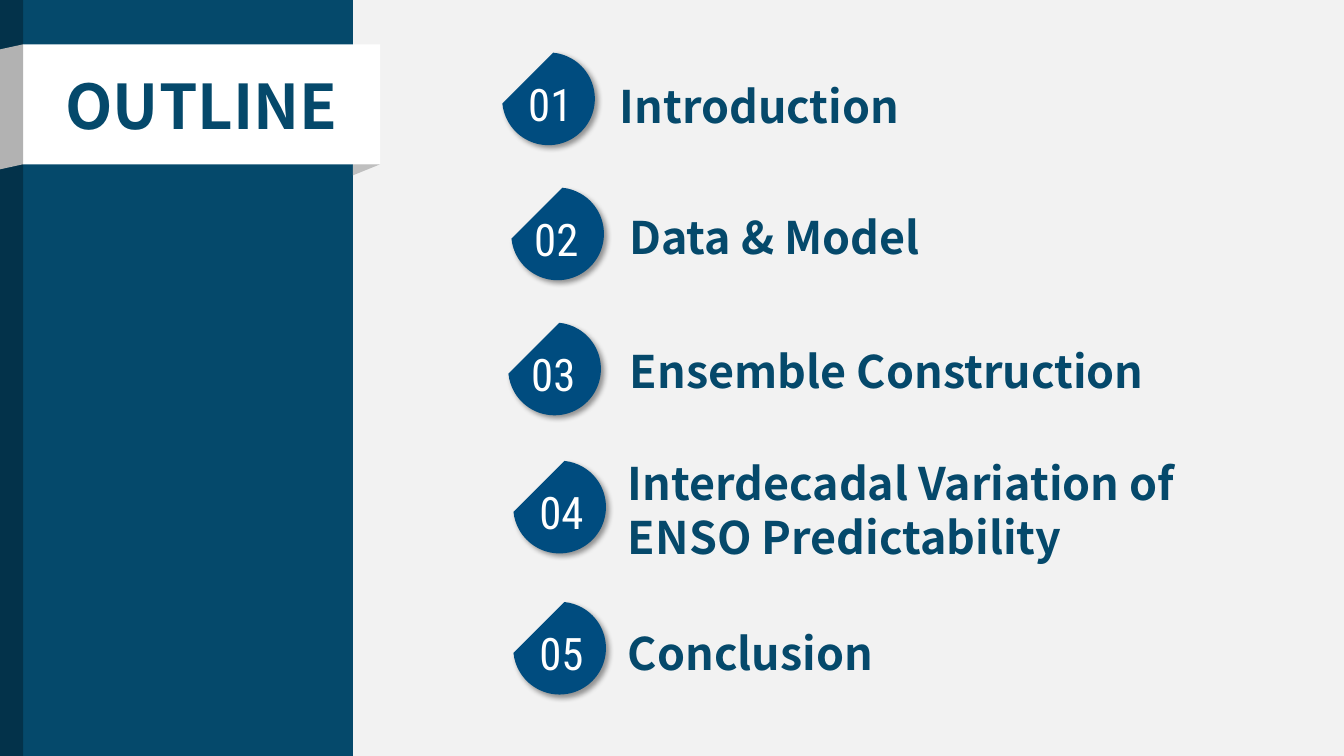
from lxml import etree
from pptx import Presentation
from pptx.dml.color import RGBColor
from pptx.enum.shapes import MSO_SHAPE
from pptx.enum.text import MSO_ANCHOR, PP_ALIGN
from pptx.oxml.ns import qn
from pptx.util import Inches, Pt

RECT, CHORD = MSO_SHAPE.RECTANGLE, MSO_SHAPE.CHORD
LEFT, CENTER = PP_ALIGN.LEFT, PP_ALIGN.CENTER
TOP, MIDDLE = MSO_ANCHOR.TOP, MSO_ANCHOR.MIDDLE

WIDE, HIGH = 13.33, 7.5
TITLE = "OUTLINE"
# title, badge left and top, number left, title left, top and size
ITEMS = [
    ("Introduction", 4.98, 0.52, 5.14, 6.05, 0.73, 3.47, 0.64),
    ("Data & Model", 5.07, 1.86, 5.2, 6.14, 2.03, 3.72, 0.64),
    ("Ensemble Construction", 5.04, 3.2, 5.17, 6.15, 3.36, 5.63, 0.64),
    ("Interdecadal Variation of ENSO Predictability",
     5.09, 4.57, 5.25, 6.13, 4.47, 5.79, 1.18),
    ("Conclusion", 5.09, 5.97, 5.25, 6.13, 6.16, 3.24, 0.64),
]
NAVY, BLUE, WHITE, GREY, PALE = "05496B", "004C7F", "FFFFFF", "BFBFBF", "F2F2F2"
SANS, SLIM = "Noto Sans CJK SC", "Roboto Condensed"
EDGE, SIDE = 0.23, 3.5           # right ends of the dark strip and the side panel
BAND = (EDGE, 0.44, 3.54, 1.19)  # title ribbon
DISC, DROP = 0.92, 0.19          # badge size, number offset below badge top


def color(code):
    return RGBColor.from_string(code)


def paint(shape, fill):
    shape.fill.solid()
    shape.fill.fore_color.rgb = color(fill)
    shape.line.fill.background()
    shape.shadow.inherit = False
    return shape


def block(kind, box, fill):
    return paint(slide.shapes.add_shape(kind, *map(Inches, box)), fill)


def fold(points, fill):
    """Draw a closed polygon for a folded end of the ribbon."""
    first, *rest = [(Inches(x), Inches(y)) for x, y in points]
    pen = slide.shapes.build_freeform(*first)
    pen.add_line_segments(rest, close=True)
    return paint(pen.convert_to_shape(), fill)


def write(shape, text, size=32, font=SANS, ink=NAVY, bold=True, align=LEFT,
          anchor=TOP):
    frame = shape.text_frame
    frame.word_wrap = True
    frame.vertical_anchor = anchor
    para = frame.paragraphs[0]
    para.alignment = align
    run = para.add_run()
    run.text = text
    run.font.size, run.font.name, run.font.bold = Pt(size), font, bold
    run.font.color.rgb = color(ink)
    for tag in ("a:ea", "a:cs"):
        etree.SubElement(run.font._element, qn(tag), typeface=font)


def label(box, text, **style):
    write(slide.shapes.add_textbox(*map(Inches, box)), text, **style)


def tint(parent, alpha):
    etree.SubElement(parent, qn("a:alpha"), val=str(alpha * 1000))


def shade(shape):
    """Cast a soft shadow to the lower right."""
    effects = shape._element.spPr.find(qn("a:effectLst"))
    outer = etree.SubElement(effects, qn("a:outerShdw"), blurRad=str(Pt(4)),
                             dist=str(Pt(3)), dir=str(45 * 60000),
                             algn="ctr", rotWithShape="0")
    tint(etree.SubElement(outer, qn("a:srgbClr"), val="000000"), 40)


deck = Presentation()
deck.slide_width, deck.slide_height = Inches(WIDE), Inches(HIGH)
slide = deck.slides.add_slide(deck.slide_layouts[6])
slide.background.fill.solid()
slide.background.fill.fore_color.rgb = color(PALE)

for num, (text, disc_x, disc_y, num_x, *box) in enumerate(ITEMS, 1):
    disc = block(CHORD, (disc_x, disc_y, DISC, DISC), BLUE)
    for i, angle in enumerate((276, 174)):
        disc.adjustments[i] = angle * 0.6
    shade(disc)
    label((num_x, disc_y + DROP, 0.82, 0.64), f"{num:02}", font=SLIM,
          ink=WHITE, bold=False)
    label(box, text)

block(RECT, (0, 0, SIDE, HIGH), NAVY)
left, top, width, height = BAND
right, base = left + width, top + height
fold([(0, top + 0.05), (left, top), (left, base), (0, base + 0.05)], WHITE)
write(block(RECT, BAND, WHITE), TITLE, size=44, align=CENTER, anchor=MIDDLE)
fold([(SIDE, base), (right, base), (SIDE, base + 0.11)], GREY)
strip = block(RECT, (0, 0, EDGE, HIGH), "000000")
tint(strip._element.spPr.find(qn("a:solidFill"))[0], 30)

deck.save("out.pptx")
